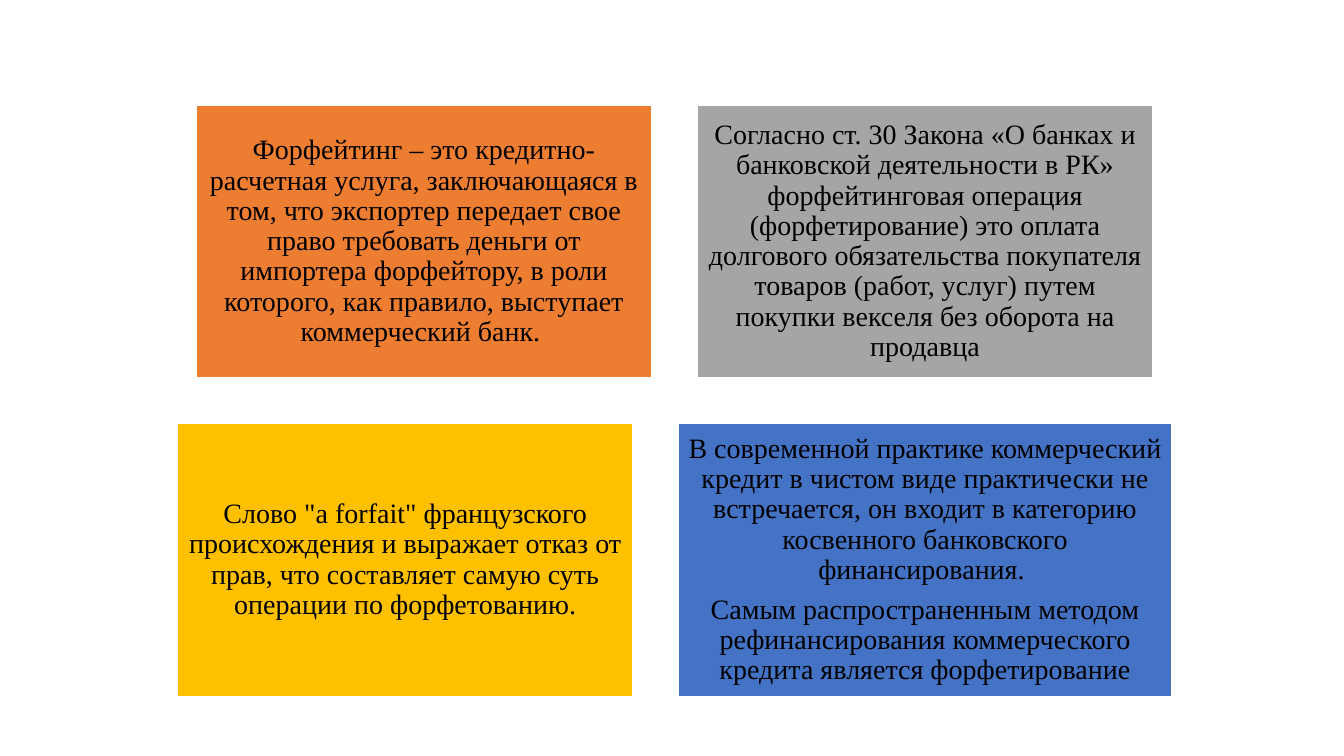
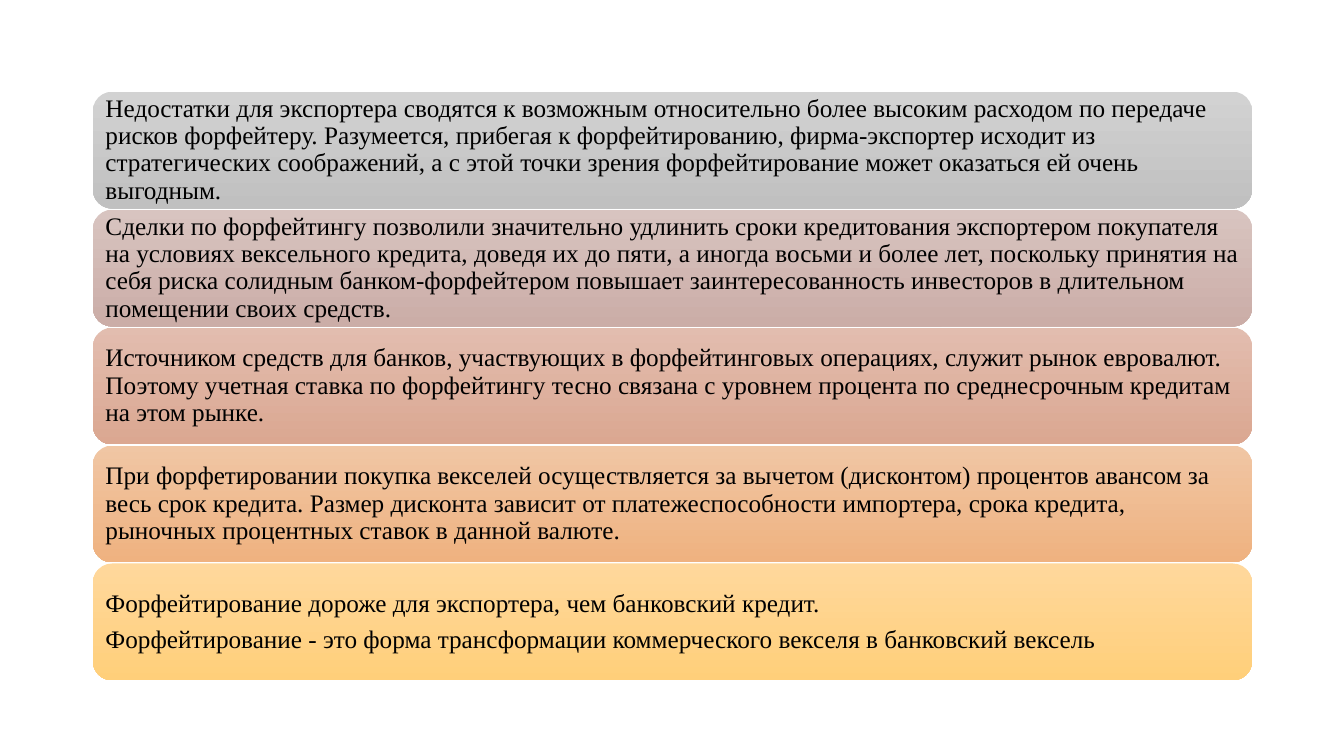
from dataclasses import dataclass

from pptx import Presentation
from pptx.dml.color import RGBColor
from pptx.enum.shapes import MSO_SHAPE as Shape
from pptx.enum.text import MSO_ANCHOR as Anchor, PP_ALIGN as Align
from pptx.util import Inches, Pt

FONT = "Times New Roman"
BLACK = "000000"
WHITE = "FFFFFF"

GRID_CENTER = 6.69
GRID_TOP = 1.04
CARD_HEIGHT = 2.71
CARD_GAP = 0.45

BAND_LEFT = 0.92
BAND_TOP = 0.91
BAND_WIDTH = 11.5
BAND_HEIGHT = 1.16
BAND_PITCH = 1.17


@dataclass(frozen=True)
class Card:
    fill: str
    paragraphs: tuple[str, ...]
    width: float = 4.52


@dataclass(frozen=True)
class Band:
    top_color: str
    bottom_color: str
    paragraphs: tuple[str, ...]


CARD_ROWS = (
    (
        Card("ED7D31", (
            "Форфейтинг – это кредитно-расчетная услуга, заключающаяся в том, "
            "что экспортер передает свое право требовать деньги от импортера "
            "форфейтору, в роли которого, как правило, выступает "
            "коммерческий банк. ",
        )),
        Card("A5A5A5", (
            "Согласно ст. 30 Закона «О банках и банковской деятельности в РК» "
            "форфейтинговая операция (форфетирование) это оплата долгового "
            "обязательства покупателя товаров (работ, услуг) путем покупки "
            "векселя без оборота на продавца",
        )),
    ),
    (
        Card("FFC000", (
            'Слово "a forfait" французского происхождения и выражает отказ '
            "от прав, что составляет самую суть операции по форфетованию.",
        )),
        Card("4472C4", (
            "В современной практике коммерческий кредит в чистом виде "
            "практически не встречается, он входит в категорию косвенного "
            "банковского финансирования. ",
            "Самым распространенным методом рефинансирования коммерческого "
            "кредита является форфетирование",
        ), 4.89),
    ),
)

BANDS = (
    Band("D2D2D2", "C0C0C0", (
        "Недостатки для экспортера сводятся к возможным относительно более "
        "высоким расходом по передаче рисков форфейтеру. Разумеется, прибегая "
        "к форфейтированию, фирма-экспортер исходит из стратегических "
        "соображений, а с этой точки зрения форфейтирование может оказаться "
        "ей очень выгодным.",
    )),
    Band("D8C4C0", "CBADA7", (
        "Сделки по форфейтингу позволили значительно удлинить сроки "
        "кредитования экспортером покупателя на условиях вексельного кредита, "
        "доведя их до пяти, а иногда восьми и более лет, поскольку принятия "
        "на себя риска солидным банком-форфейтером повышает "
        "заинтересованность инвесторов в длительном помещении своих средств.",
    )),
    Band("E2BDAF", "DBA791", (
        "Источником средств для банков, участвующих в форфейтинговых "
        "операциях, служит рынок евровалют. Поэтому учетная ставка по "
        "форфейтингу тесно связана с уровнем процента по среднесрочным "
        "кредитам на этом рынке.",
    )),
    Band("F0C6A4", "EFB280", (
        "При форфетировании покупка векселей осуществляется за вычетом "
        "(дисконтом) процентов авансом за весь срок кредита. Размер дисконта "
        "зависит от платежеспособности импортера, срока кредита, рыночных "
        "процентных ставок в данной валюте.",
    )),
    Band("FFD89C", "FFCF7A", (
        "Форфейтирование дороже для экспортера, чем банковский кредит.",
        "Форфейтирование - это форма трансформации коммерческого векселя "
        "в банковский вексель",
    )),
)


def rgb(color: str) -> RGBColor:
    return RGBColor.from_string(color)


def add_box(s, kind: Shape, left: float, top: float, width: float, height: float):
    sp = s.shapes.add_shape(
        kind, Inches(left), Inches(top), Inches(width), Inches(height)
    )
    sp.shadow.inherit = False
    return sp


def write(sp, paragraphs: tuple[str, ...], size: int, align: Align, inset: float) -> None:
    tf = sp.text_frame
    tf.word_wrap = True
    tf.vertical_anchor = Anchor.MIDDLE
    tf.margin_left = tf.margin_right = Inches(inset)
    tf.margin_top = tf.margin_bottom = Inches(inset)
    for i, text in enumerate(paragraphs):
        p = tf.add_paragraph() if i else tf.paragraphs[0]
        p.alignment = align
        p.line_spacing = 0.9
        p.space_after = Pt(size * 0.35)
        r = p.add_run()
        r.text = text
        r.font.name = FONT
        r.font.size = Pt(size)
        r.font.color.rgb = rgb(BLACK)


def draw_card_row(s, cards: tuple[Card, ...], top: float) -> None:
    total = sum(card.width for card in cards) + CARD_GAP * (len(cards) - 1)
    left = GRID_CENTER - total / 2
    for card in cards:
        sp = add_box(s, Shape.RECTANGLE, left, top, card.width, CARD_HEIGHT)
        sp.fill.solid()
        sp.fill.fore_color.rgb = rgb(card.fill)
        sp.line.color.rgb = rgb(WHITE)
        sp.line.width = Pt(1)
        write(sp, card.paragraphs, 20, Align.CENTER, 0.08)
        left += card.width + CARD_GAP


def draw_band(s, band: Band, top: float) -> None:
    sp = add_box(s, Shape.ROUNDED_RECTANGLE, BAND_LEFT, top, BAND_WIDTH, BAND_HEIGHT)
    sp.fill.gradient()
    sp.fill.gradient_angle = 270
    for stop, color in zip(sp.fill.gradient_stops, (band.top_color, band.bottom_color)):
        stop.color.rgb = rgb(color)
    sp.line.fill.background()
    write(sp, band.paragraphs, 18, Align.LEFT, 0.07)


def main() -> None:
    prs = Presentation()
    prs.slide_width = Inches(13.33)
    prs.slide_height = Inches(7.5)
    blank = prs.slide_layouts[6]

    s = prs.slides.add_slide(blank)
    for i, cards in enumerate(CARD_ROWS):
        draw_card_row(s, cards, GRID_TOP + i * (CARD_HEIGHT + CARD_GAP))

    s = prs.slides.add_slide(blank)
    for i, band in enumerate(BANDS):
        draw_band(s, band, BAND_TOP + i * BAND_PITCH)

    prs.save("out.pptx")


if __name__ == "__main__":
    main()
